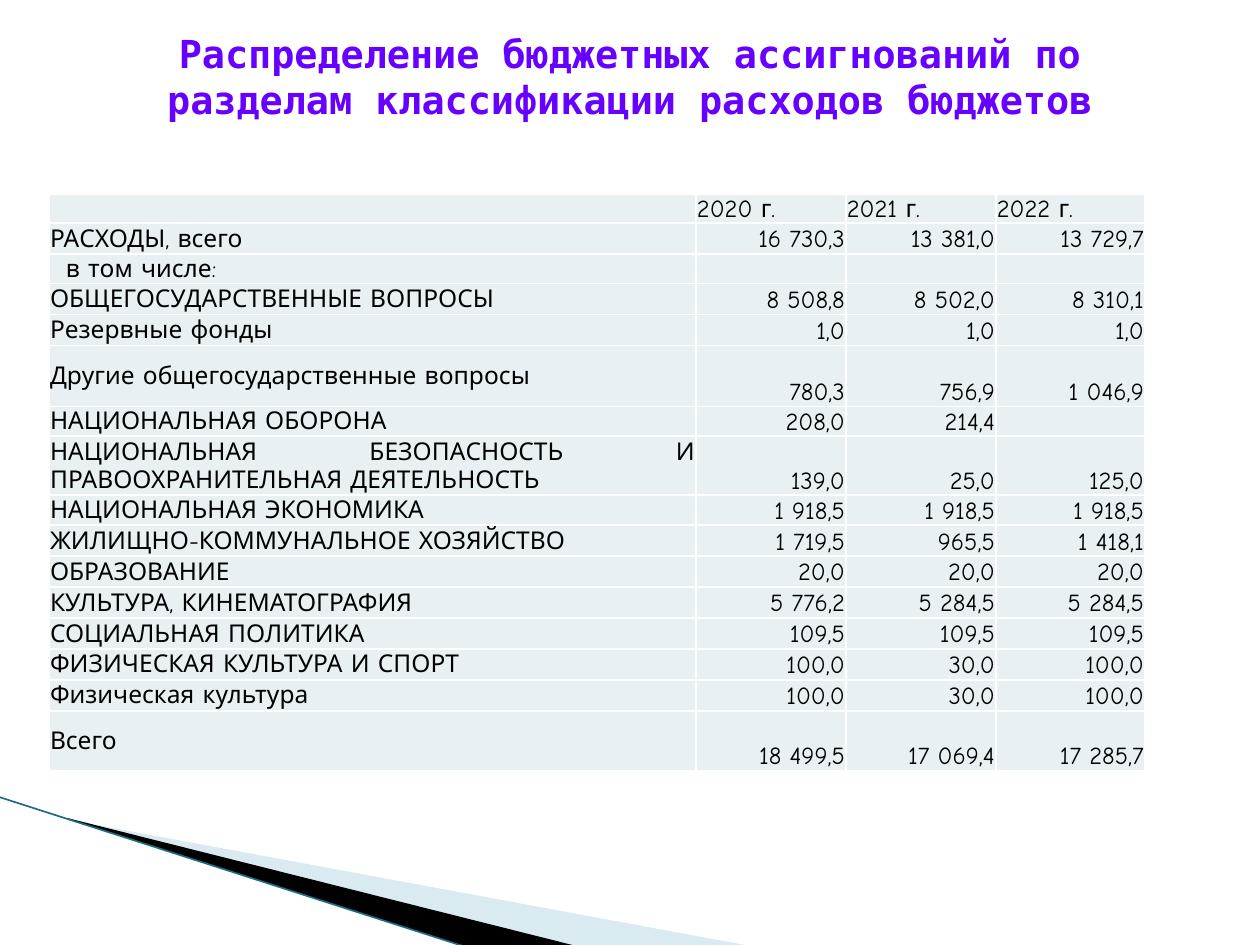
from lxml import etree
from pptx import Presentation
from pptx.dml.color import RGBColor
from pptx.enum.shapes import MSO_CONNECTOR
from pptx.enum.text import MSO_ANCHOR, PP_ALIGN
from pptx.oxml.ns import qn
from pptx.util import Emu, Pt

LEFT, RIGHT, CENTER, JUSTIFY = PP_ALIGN.LEFT, PP_ALIGN.RIGHT, PP_ALIGN.CENTER, PP_ALIGN.JUSTIFY
MIDDLE, BOTTOM = MSO_ANCHOR.MIDDLE, MSO_ANCHOR.BOTTOM
STRAIGHT = MSO_CONNECTOR.STRAIGHT

BLACK = RGBColor(0x00, 0x00, 0x00)
VIOLET = RGBColor(0x66, 0x00, 0xFF)
PALE_BLUE = RGBColor(0xA0, 0xCB, 0xDC)
TEAL = RGBColor(0x1C, 0x6F, 0x83)
CELL_FILL = RGBColor(0xE8, 0xF0, 0xF4)
WHITE = RGBColor(0xFF, 0xFF, 0xFF)

SCALE = 914400 / 126  # EMU in one px


def px(length):
    return Emu(round(length * SCALE))


deck = Presentation()
deck.slide_width, deck.slide_height = px(1260), px(945)
page = deck.slides.add_slide(deck.slide_layouts[6])

# Corner wedges: frame, points, colour, opacity in percent
wedges = [
    ((98, 689, 524, 199), [(69, 820), (750, 946), (575, 946), (69, 819)], PALE_BLUE, 40),
    ((-8, 798, 524, 116), [(67, 818), (576, 946), (469, 948), (68, 819)], BLACK, 100),
]
for (left, top, width, height), points, color, opacity in wedges:
    builder = page.shapes.build_freeform(*points[0], scale=SCALE)
    builder.add_line_segments(points[1:], close=True)
    wedge = builder.convert_to_shape()
    wedge.shadow.inherit = False
    wedge.fill.solid()
    wedge.fill.fore_color.rgb = color
    wedge.line.fill.background()
    if opacity < 100:
        tint = wedge.fill._xPr.find(qn("a:solidFill"))[0]
        etree.SubElement(tint, qn("a:alpha"), val=str(opacity * 1000))

    # The outline reaches beyond its frame, so points count from the frame's corner
    wedge.left, wedge.top, wedge.width, wedge.height = map(px, (left, top, width, height))
    outline = next(wedge._element.iter(qn("a:path")))
    outline.set("w", str(width))
    outline.set("h", str(height))
    for node, (x, y) in zip(outline.iter(qn("a:pt")), points):
        node.set("x", str(x - left))
        node.set("y", str(y - top))

# Corner line
edge = page.shapes.add_connector(STRAIGHT, px(-1), px(797), px(469), px(948))
edge.line.color.rgb = TEAL
edge.line.width = Pt(0.95)
etree.SubElement(edge._element.spPr, qn("a:effectLst"))

# Budget table
rows = [
    ("", "2020 г.", "2021 г.", "2022 г."),
    ("РАСХОДЫ, всего", "16 730,3", "13 381,0", "13 729,7"),
    ("в том числе:", "", "", ""),
    ("ОБЩЕГОСУДАРСТВЕННЫЕ ВОПРОСЫ", "8 508,8", "8 502,0", "8 310,1"),
    ("Резервные фонды", "1,0", "1,0", "1,0"),
    ("Другие общегосударственные вопросы", "780,3", "756,9", "1 046,9"),
    ("НАЦИОНАЛЬНАЯ ОБОРОНА", "208,0", "214,4", ""),
    ("НАЦИОНАЛЬНАЯ БЕЗОПАСНОСТЬ И ПРАВООХРАНИТЕЛЬНАЯ ДЕЯТЕЛЬНОСТЬ",
     "139,0", "25,0", "125,0"),
    ("НАЦИОНАЛЬНАЯ ЭКОНОМИКА", "1 918,5", "1 918,5", "1 918,5"),
    ("ЖИЛИЩНО-КОММУНАЛЬНОЕ ХОЗЯЙСТВО", "1 719,5", "965,5", "1 418,1"),
    ("ОБРАЗОВАНИЕ", "20,0", "20,0", "20,0"),
    ("КУЛЬТУРА, КИНЕМАТОГРАФИЯ", "5 776,2", "5 284,5", "5 284,5"),
    ("СОЦИАЛЬНАЯ ПОЛИТИКА", "109,5", "109,5", "109,5"),
    ("ФИЗИЧЕСКАЯ КУЛЬТУРА И СПОРТ", "100,0", "30,0", "100,0"),
    ("Физическая культура", "100,0", "30,0", "100,0"),
    ("Всего", "18 499,5", "17 069,4", "17 285,7"),
]
widths = [647, 150, 150, 149]
heights = [29, 31, 29, 31, 31, 61, 30, 59, 30] + [31] * 6 + [60]
SUBHEAD_ROW = 2

table = page.shapes.add_table(len(rows), len(widths), px(49), px(194),
                              px(sum(widths)), px(sum(heights))).table
table.first_row = table.horz_banding = False
for column, width in zip(table.columns, widths):
    column.width = px(width)
for row, height in zip(table.rows, heights):
    row.height = px(height)

cell_font = {"size": Pt(14), "name": "Comic Neue"}
for r, texts in enumerate(rows):
    for c, text in enumerate(texts):
        cell = table.cell(r, c)
        indent = 17 if r == SUBHEAD_ROW and c == 0 else 1
        is_label = c == 0 or r in (1, SUBHEAD_ROW)
        cell_format = {
            "margin_left": px(indent), "margin_right": px(1),
            "margin_top": px(1), "margin_bottom": 0,
            "vertical_anchor": MIDDLE if is_label else BOTTOM,
        }
        for name, value in cell_format.items():
            setattr(cell, name, value)
        cell.fill.solid()
        cell.fill.fore_color.rgb = CELL_FILL

        # White rules go ahead of the fill
        properties = cell._tc.get_or_add_tcPr()
        for place, side in enumerate(("lnL", "lnR", "lnT", "lnB")):
            rule = etree.Element(qn("a:" + side), w=str(Pt(1)))
            solid = etree.SubElement(rule, qn("a:solidFill"))
            etree.SubElement(solid, qn("a:srgbClr"), val=str(WHITE))
            properties.insert(place, rule)

        para = cell.text_frame.paragraphs[0]
        if not text:
            etree.SubElement(para._p, qn("a:endParaRPr"), sz="1200")
            continue
        if c == 0:
            para.alignment = JUSTIFY if r > SUBHEAD_ROW else LEFT
        else:
            para.alignment = RIGHT if r else LEFT
        span = para.add_run()
        span.text = text
        for name, value in cell_font.items():
            setattr(span.font, name, value)
        span.font.color.rgb = BLACK

# Title
box = page.shapes.add_textbox(px(63), px(16), px(1134), px(120))
frame = box.text_frame
frame.word_wrap = True
frame.vertical_anchor = MIDDLE
para = frame.paragraphs[0]
para.alignment = CENTER
span = para.add_run()
span.text = "Распределение бюджетных ассигнований по разделам классификации расходов бюджетов"
title_font = {"size": Pt(22), "name": "DejaVu Sans Mono", "bold": True}
for name, value in title_font.items():
    setattr(span.font, name, value)
span.font.color.rgb = VIOLET

deck.save("out.pptx")
